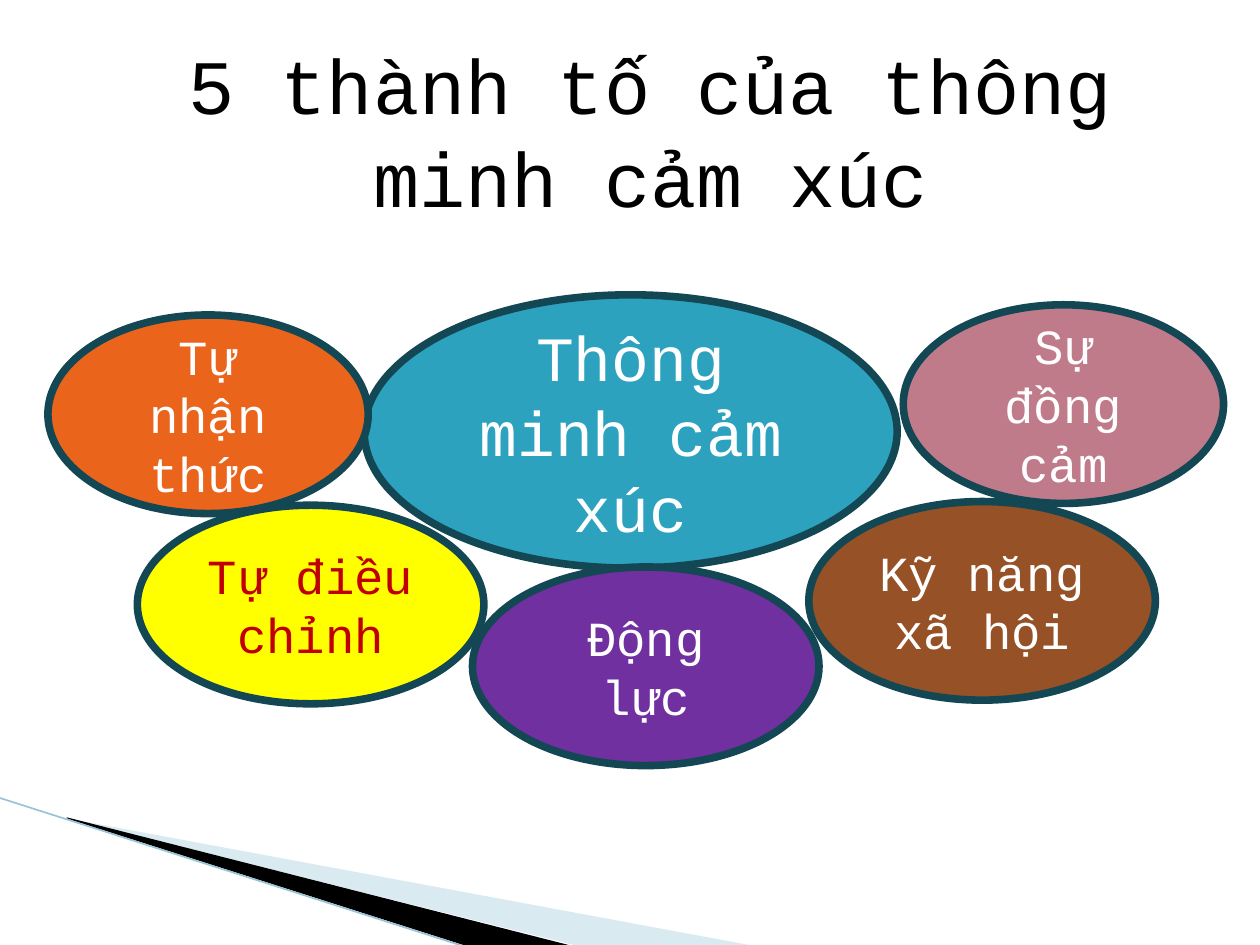
from lxml import etree
from pptx import Presentation
from pptx import util as u
from pptx.dml.color import RGBColor
from pptx.enum import shapes, text
from pptx.oxml.ns import qn

FONT = "Courier New"
OUTLINE = "144754"
WHITE = "FFFFFF"
SMALL = (183, 113.5)
WIDE = (198, 113.5)
COMPONENTS = [
    ("Tự nhận thức", (27.4, 180), SMALL, "EB641B", WHITE),
    ("Tự điều chỉnh", (78.5, 288.7), WIDE, "FFFF00", "C00000"),
    ("Động lực", (270, 324), WIDE, "7030A0", WHITE),
    ("Sự đồng cảm", (516.2, 174.2), SMALL, "C07B8A", WHITE),
    ("Kỹ năng xã hội", (462.2, 286.6), WIDE, "965127", WHITE),
]


def rgb(color):
    return RGBColor.from_string(color)


def add_text(tf, words, size, color):
    tf.word_wrap = True
    p = tf.paragraphs[0]
    p.alignment = text.PP_ALIGN.CENTER
    r = p.add_run()
    r.text = words
    r.font.name = FONT
    r.font.size = u.Pt(size)
    r.font.color.rgb = rgb(color)


def add_wedge(s, points, color, opacity=100):
    builder = s.shapes.build_freeform(*points[0], scale=u.Pt(1))
    builder.add_line_segments(points[1:], close=True)
    sp = builder.convert_to_shape()
    sp.shadow.inherit = False
    sp.line.fill.background()
    sp.fill.solid()
    sp.fill.fore_color.rgb = rgb(color)
    if opacity < 100:
        clr = sp.fill._xPr.find(qn("a:solidFill"))[0]
        etree.SubElement(clr, qn("a:alpha"), val=str(opacity * 1000))


def add_line(s, start, end, color, width):
    ends = [u.Pt(v) for v in (*start, *end)]
    line = s.shapes.add_connector(shapes.MSO_CONNECTOR.STRAIGHT, *ends)
    line.line.color.rgb = rgb(color)
    line.line.width = u.Pt(width)
    etree.SubElement(line._element.spPr, qn("a:effectLst"))


def add_ellipse(s, words, pos, dims, fill, color=WHITE, size=28):
    box = [u.Pt(v) for v in (*pos, *dims)]
    sp = s.shapes.add_shape(shapes.MSO_SHAPE.OVAL, *box)
    sp.shadow.inherit = False
    sp.fill.solid()
    sp.fill.fore_color.rgb = rgb(fill)
    sp.line.color.rgb = rgb(OUTLINE)
    sp.line.width = u.Pt(4.33)
    sp.text_frame.vertical_anchor = text.MSO_ANCHOR.MIDDLE
    add_text(sp.text_frame, words, size, color)


def add_title(s, words):
    sp = s.shapes.add_textbox(u.Pt(95.8), u.Pt(18), u.Pt(552.2), u.Pt(113.8))
    tf = sp.text_frame
    add_text(tf, words, 44, "000000")
    tf.auto_size = text.MSO_AUTO_SIZE.SHAPE_TO_FIT_TEXT


def main():
    prs = Presentation()
    prs.slide_width, prs.slide_height = u.Pt(720), u.Pt(540)
    s = prs.slides.add_slide(prs.slide_layouts[6])
    add_wedge(s, [(39.6, 468.5), (428.4, 540.5), (328.3, 540.5), (39.6, 468)],
              "A0CBDC", 40)
    add_wedge(s, [(38.2, 467.3), (329, 540.7), (267.8, 541.4), (38.9, 468)],
              "000000")
    add_line(s, (-0.7, 455.8), (267.1, 541.4), "97C5D8", 0.95)
    add_ellipse(s, "Thông minh cảm xúc", (208.1, 168.5), (304.6, 156.2),
                "2DA2BF", size=36)
    for component in COMPONENTS:
        add_ellipse(s, *component)
    add_title(s, "5 thành tố của thông minh cảm xúc")
    prs.save("out.pptx")


if __name__ == "__main__":
    main()
